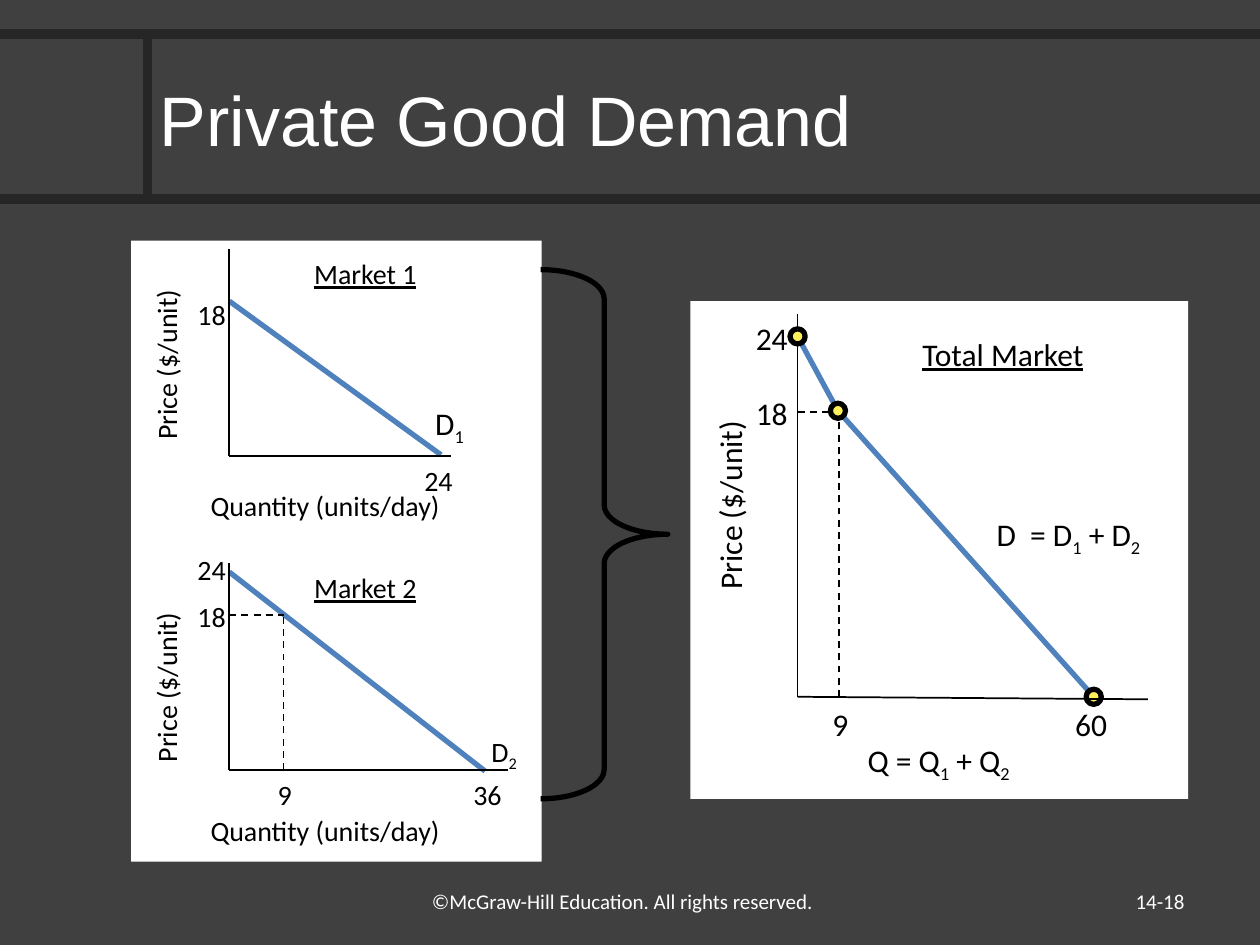
from lxml import etree
from pptx import Presentation
from pptx.dml.color import RGBColor
from pptx.enum.dml import MSO_LINE
from pptx.enum.shapes import MSO_CONNECTOR, MSO_SHAPE
from pptx.enum.text import MSO_ANCHOR, PP_ALIGN
from pptx.oxml.ns import qn
from pptx.util import Inches, Pt

BLACK, WHITE, CURVE, BAR = "000000", "FFFFFF", "4F81BD", "262626"
BACKGROUND, DOT = "404040", "FFF05B"
LEFT, CENTER, RIGHT = PP_ALIGN.LEFT, PP_ALIGN.CENTER, PP_ALIGN.RIGHT

MARKETS = [
    {
        "title": "Market 1", "origin": (0.78, 1.71), "axis": 1.76,
        "demand": ((0, -1.23), (1.68, -0.01)),
        "price_mid": -0.72, "quantity_top": 0.21,
        "labels": [("18", 0.07, -1.31, RIGHT, 16), ("D_1", 1.96, -0.46, RIGHT, 18),
                   ("24", 1.66, 0.01, CENTER, 16)],
    },
    {
        "title": "Market 2", "origin": (0.78, 4.2), "axis": 2.21,
        "demand": ((0, -1.57), (2.03, 0.01)), "guide": (0.43, -1.23),
        "price_mid": -0.65, "quantity_top": 0.3,
        "labels": [("24", 0.07, -1.77, RIGHT, 16), ("18", 0.07, -1.4, RIGHT, 16),
                   ("D_2", 2.38, -0.33, RIGHT, 16), ("36", 2.26, 0.01, RIGHT, 16),
                   ("9", 0.44, 0.01, CENTER, 16)],
    },
]


def color(value):
    return RGBColor.from_string(value)


def add_line(page, start, end, line_color=BLACK, width=1, dashed=False):
    ends = [Inches(value) for value in (*start, *end)]
    line = page.shapes.add_connector(MSO_CONNECTOR.STRAIGHT, *ends)
    line.line.color.rgb = color(line_color)
    line.line.width = Pt(width)
    if dashed:
        line.line.dash_style = MSO_LINE.DASH
    etree.SubElement(line._element.spPr, qn("a:effectLst"))
    return line


def style_shape(shape, fill=None, outline=None):
    shape.shadow.inherit = False
    if fill:
        shape.fill.solid()
        shape.fill.fore_color.rgb = color(fill)
    else:
        shape.fill.background()
    if outline:
        shape.line.color.rgb = color(outline)
        shape.line.width = Pt(3)
    else:
        shape.line.fill.background()


def add_shape(page, kind, box, fill=None, outline=None):
    shape = page.shapes.add_shape(kind, *[Inches(value) for value in box])
    style_shape(shape, fill, outline)
    return shape


def add_text(page, text, box, align=CENTER, anchor=MSO_ANCHOR.TOP, **formats):
    """Add a text box; a character after an underscore is a subscript."""
    shape = page.shapes.add_textbox(*[Inches(value) for value in box])
    shape.text_frame.word_wrap = True
    shape.text_frame.vertical_anchor = anchor
    para = shape.text_frame.paragraphs[0]
    para.alignment = align
    font_values = {"name": "Calibri", "size": Pt(16)} | formats
    font_color = font_values.pop("rgb", BLACK)
    first, *rest = text.split("_")
    pieces = [(first, False)]
    for part in rest:
        pieces += [(part[0], True), (part[1:], False)]
    for piece, subscript in pieces:
        if not piece:
            continue
        span = para.add_run()
        span.text = piece
        span.font.color.rgb = color(font_color)
        for name, value in font_values.items():
            setattr(span.font, name, value)
        if subscript:
            span.font._element.set("baseline", "-25000")
    return shape


def add_label(page, text, x, top, align=CENTER, size=16, width=0.6, **formats):
    """Place a label with its centre or right edge at x."""
    left = x - width if align == RIGHT else x - width / 2
    box = (left, top, width, 0.37 if size == 16 else 0.4)
    return add_text(page, text, box, align, size=Pt(size), **formats)


def add_price_label(page, x, middle, size=16):
    label = add_label(page, "Price ($/unit)", x, middle - 0.19, size=size, width=1.8)
    label.rotation = 270


def add_guides(page, origin, point):
    """Draw dashed lines from a point to both axes."""
    add_line(page, (point[0], origin[1]), point, dashed=True)
    add_line(page, (origin[0], point[1]), point, dashed=True)


def draw_market(page, panel, market):
    x, y = panel[0] + market["origin"][0], panel[1] + market["origin"][1]
    start, end = [(x + dx, y + dy) for dx, dy in market["demand"]]
    add_line(page, start, end, CURVE, 3)
    add_line(page, (x, y - 1.64), (x, y))
    add_line(page, (x, y), (x + market["axis"], y))
    if "guide" in market:
        dx, dy = market["guide"]
        add_guides(page, (x, y), (x + dx, y + dy))
    add_label(page, market["title"], x + 1.08, y - 1.63, width=1.28, underline=True)
    add_price_label(page, x - 0.5, y + market["price_mid"])
    add_label(page, "Quantity (units/day)", x + 0.76, y + market["quantity_top"], width=2.48)
    for text, dx, dy, align, size in market["labels"]:
        add_label(page, text, x + dx, y + dy, align, size)


def draw_single_markets(page, box):
    add_shape(page, MSO_SHAPE.RECTANGLE, box, WHITE)
    for market in MARKETS:
        draw_market(page, box, market)


def draw_total_market(page, box):
    add_shape(page, MSO_SHAPE.RECTANGLE, box, WHITE)
    x, y = box[0] + 0.85, box[1] + 3.14
    top, kink, bottom = (x, y - 2.86), (x + 0.32, y - 2.27), (x + 2.35, y)

    add_line(page, (x, y - 3.04), (x, y))
    curve = page.shapes.build_freeform(Inches(bottom[0]), Inches(bottom[1]))
    curve.add_line_segments(
        [(Inches(px), Inches(py)) for px, py in (kink, top)], close=False)
    style_shape(curve.convert_to_shape(), outline=CURVE)
    add_guides(page, (x, y), (x + 0.33, y - 2.26))

    add_price_label(page, x - 0.54, y - 1.53, 18)
    add_label(page, "Total Market", x + 1.63, y - 2.92, size=18, width=1.66, underline=True)
    for text, dx, dy, align, width in [
        ("24", 0.02, -3.05, RIGHT, 0.6),
        ("18", 0.02, -2.45, RIGHT, 0.6),
        ("9", 0.34, 0.02, CENTER, 0.6),
        ("60", 2.33, 0.02, CENTER, 0.6),
        ("Q = Q_1 + Q_2", 1.12, 0.3, CENTER, 1.62),
        ("D  = D_1 + D_2", 2.15, -1.49, CENTER, 1.66),
    ]:
        add_label(page, text, x + dx, y + dy, align, 18, width)
    for px, py in (top, kink, bottom):
        add_shape(page, MSO_SHAPE.OVAL, (px - 0.06, py - 0.06, 0.12, 0.12), DOT, BLACK)
    add_line(page, (x, y), (x + 2.78, y + 0.02))


def draw_brace(page, box):
    brace = add_shape(page, MSO_SHAPE.RIGHT_BRACE, box, outline=BLACK)
    brace.adjustments[0] = 0.23
    brace.adjustments[1] = 0.5


def draw_header(page, box):
    left, top, width, height = box
    right, bottom = left + width, top + height
    for start, end in [((0, bottom), (right, bottom)), ((left, top), (left, bottom)),
                       ((0, top), (right, top))]:
        add_line(page, start, end, BAR, 5.5)
    add_text(page, "Private Good Demand", (left, top + 0.03, width, height - 0.03), LEFT,
             MSO_ANCHOR.MIDDLE, name="Arial", size=Pt(40), rgb=WHITE)


def draw_footer(page, box):
    left, top, width, height = box
    style = {"size": Pt(12), "rgb": WHITE}
    add_text(page, "©McGraw-Hill Education. All rights reserved.",
             (left, top + 0.05, 3.33, 0.35), LEFT, **style)
    add_text(page, "14-18", (left + width - 2.33, top, 2.33, height), RIGHT,
             MSO_ANCHOR.MIDDLE, **style)


def main():
    deck = Presentation()
    deck.slide_width, deck.slide_height = Inches(10), Inches(7.5)
    page = deck.slides.add_slide(deck.slide_layouts[6])
    page.background.fill.solid()
    page.background.fill.fore_color.rgb = color(BACKGROUND)
    draw_header(page, (1.17, 0.27, 8.83, 1.31))
    draw_single_markets(page, (1.04, 1.91, 3.26, 4.93))
    draw_total_market(page, (5.48, 2.39, 3.95, 3.95))
    draw_brace(page, (4.29, 2.14, 1.01, 4.2))
    draw_footer(page, (3.33, 6.95, 6.17, 0.4))
    deck.save("out.pptx")


if __name__ == "__main__":
    main()
